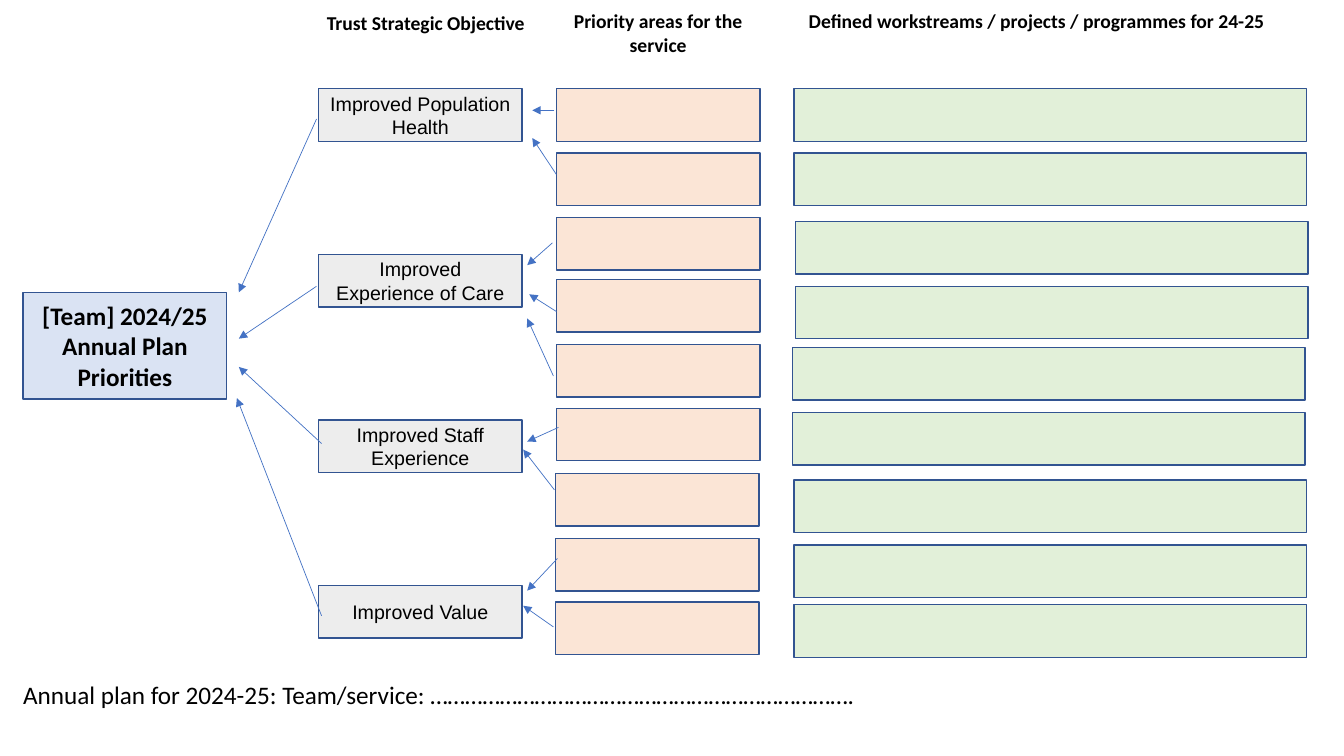
from lxml import etree
from pptx import Presentation
from pptx.dml.color import RGBColor
from pptx.enum.shapes import MSO_CONNECTOR, MSO_SHAPE
from pptx.enum.text import MSO_ANCHOR, MSO_AUTO_SIZE, PP_ALIGN
from pptx.oxml.ns import qn
from pptx.util import Pt

RECTANGLE = MSO_SHAPE.RECTANGLE
STRAIGHT = MSO_CONNECTOR.STRAIGHT
MIDDLE = MSO_ANCHOR.MIDDLE
GROW = MSO_AUTO_SIZE.SHAPE_TO_FIT_TEXT
CENTER, LEFT = PP_ALIGN.CENTER, PP_ALIGN.LEFT

COLOURS = {
    "text": "000000",
    "outline": "325491",
    "arrow": "4472C4",
    "team": "DAE3F3",
    "objective": "EDEDED",
    "priority": "FBE5D6",
    "workstream": "E2F0D9",
}

BOX_WIDTH, BOX_HEIGHT = 145.5, 37.5
WORKSTREAM_WIDTH = 366
OBJECTIVE_LEFT, OBJECTIVE_TOP, OBJECTIVE_STEP = 227.5, 63.4, 118.3

OBJECTIVES = [
    "Improved Population Health",
    "Improved Experience of Care",
    "Improved Staff Experience",
    "Improved Value",
]

# Column left edge, then the tops of the boxes standing on it
PRIORITIES = [
    (397.4, [63.4, 109.4, 155.5, 199.6, 246, 291.6]),
    (396.8, [338.2, 384.7, 430]),
]
WORKSTREAMS = [
    (567.2, [63.4, 109.4]),
    (568.2, [158.2, 204.5]),
    (566.1, [248.2, 294.6]),
    (567.2, [342.9, 389.3, 432]),
]

# Start x, start y, end x, end y
OBJECTIVE_ARROWS = [
    (226.1, 85, 170.6, 208.8),
    (226.1, 204.5, 170.6, 241.9),
    (229.7, 316.8, 170.6, 262.1),
    (229.7, 439.9, 169.2, 284.4),
]
PRIORITY_ARROWS = [
    (396, 78.8, 380.2, 78.8),
    (397.4, 124.6, 380.2, 98.6),
    (394.6, 173.5, 376.6, 189.4),
    (397.4, 222.5, 378, 210.2),
    (395.3, 268.6, 376.6, 227.5),
    (398.9, 305.3, 376.6, 315.4),
    (396, 349.9, 373.7, 321.1),
    (398.2, 398.9, 376.6, 421.9),
    (395.3, 447.8, 373.7, 432.7),
]

# Text, left, top, width, height
HEADINGS = [
    ("Trust Strategic Objective", 216.7, 4.3, 175, 24.5),
    ("Priority areas for the service", 397.4, 2.9, BOX_WIDTH, 41),
    ("Defined workstreams / projects / programmes for 24-25", 560.9, 2.9, 359.3, 24.5),
]


class DriverDiagram:
    def __init__(self, slide, colours):
        self.shapes = slide.shapes
        self.colours = colours

    def colour(self, name):
        return RGBColor.from_string(self.colours[name])

    def set_text(self, shape, text, size, font="Calibri", bold=False, alignment=CENTER):
        frame = shape.text_frame
        frame.word_wrap = True
        frame.text = text
        paragraph = frame.paragraphs[0]
        paragraph.alignment = alignment
        paragraph.font.name = font
        paragraph.font.size = Pt(size)
        paragraph.font.bold = bold
        paragraph.font.color.rgb = self.colour("text")

    def box(self, fill, left, top, width=BOX_WIDTH, height=BOX_HEIGHT):
        shape = self.shapes.add_shape(RECTANGLE, Pt(left), Pt(top), Pt(width), Pt(height))
        shape.shadow.inherit = False
        shape.fill.solid()
        shape.fill.fore_color.rgb = self.colour(fill)
        shape.line.color.rgb = self.colour("outline")
        shape.line.width = Pt(1)
        shape.text_frame.vertical_anchor = MIDDLE
        return shape

    def columns(self, fill, groups, width):
        for left, tops in groups:
            for top in tops:
                self.box(fill, left, top, width)

    def label(self, text, left, top, width, height, **style):
        label = self.shapes.add_textbox(Pt(left), Pt(top), Pt(width), Pt(height))
        self.set_text(label, text, **style)
        label.text_frame.auto_size = GROW

    def arrow(self, *ends):
        connector = self.shapes.add_connector(STRAIGHT, *map(Pt, ends))
        connector.line.color.rgb = self.colour("arrow")
        connector.line.width = Pt(0.5)
        properties = connector._element.spPr
        etree.SubElement(properties.find(qn("a:ln")), qn("a:tailEnd"), type="triangle")
        etree.SubElement(properties, qn("a:effectLst"))


def main():
    presentation = Presentation()
    presentation.slide_width, presentation.slide_height = Pt(960), Pt(540)
    slide = presentation.slides.add_slide(presentation.slide_layouts[6])
    diagram = DriverDiagram(slide, COLOURS)

    team = diagram.box("team", 16.5, 208.8, BOX_WIDTH, 76.3)
    diagram.set_text(team, "[Team] 2024/25 Annual Plan Priorities", 18, bold=True)

    for index, objective in enumerate(OBJECTIVES):
        top = OBJECTIVE_TOP + index * OBJECTIVE_STEP
        shape = diagram.box("objective", OBJECTIVE_LEFT, top)
        diagram.set_text(shape, objective, 14, font="Arial")

    diagram.columns("priority", PRIORITIES, BOX_WIDTH)
    diagram.columns("workstream", WORKSTREAMS, WORKSTREAM_WIDTH)

    for ends in OBJECTIVE_ARROWS + PRIORITY_ARROWS:
        diagram.arrow(*ends)

    for text, *place in HEADINGS:
        diagram.label(text, *place, size=14, bold=True)

    diagram.label(
        "Annual plan for 2024-25: Team/service: ………………………………………………………………. ",
        9.4, 481.7, 609.8, 51, size=18, alignment=LEFT,
    )

    presentation.save("out.pptx")


if __name__ == "__main__":
    main()
